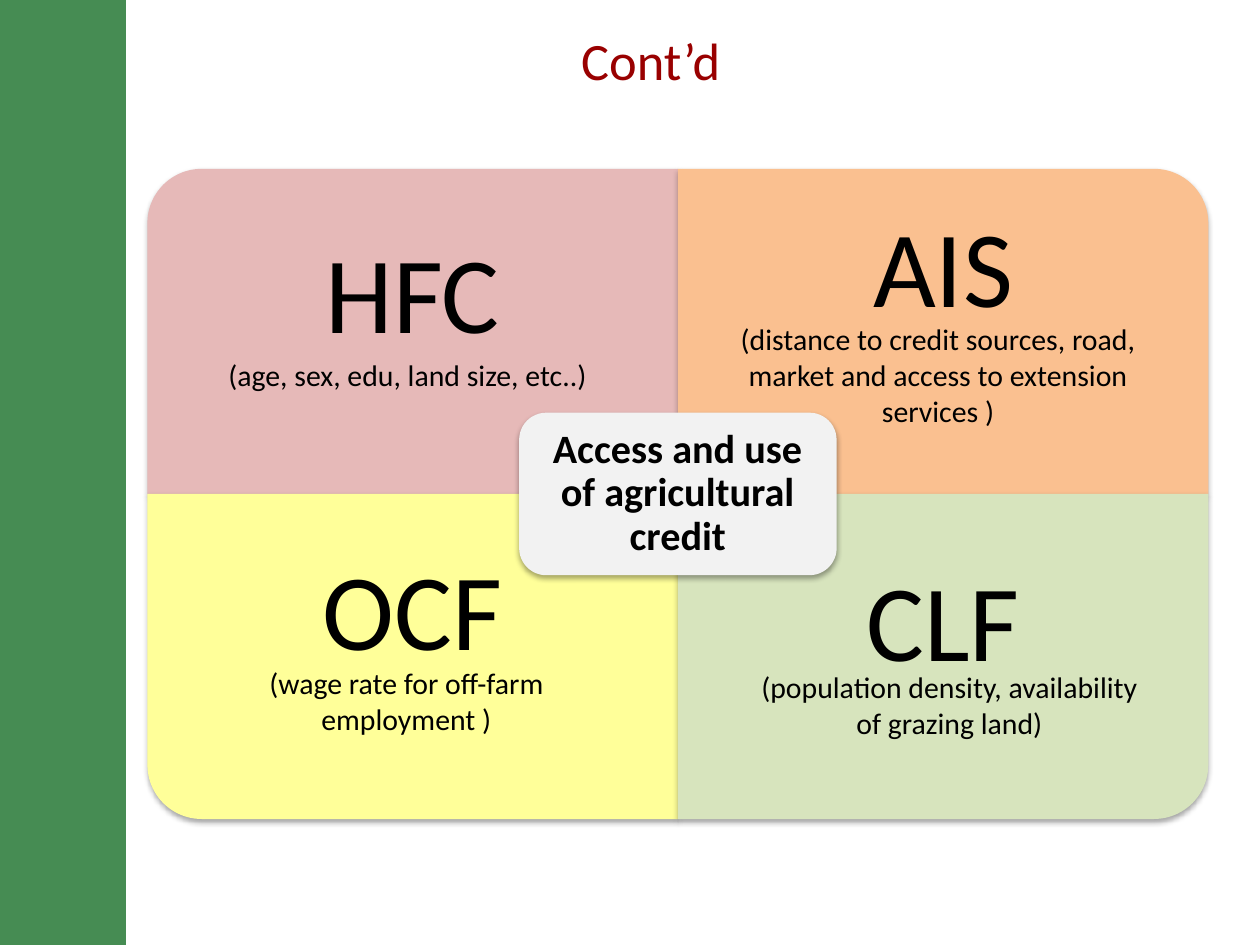
from math import cos, pi, sin

from lxml.etree import SubElement
from pptx import Presentation
from pptx.dml.color import RGBColor
from pptx.enum.shapes import MSO_SHAPE as Shape
from pptx.enum.text import MSO_ANCHOR as Anchor, PP_ALIGN as Align
from pptx.oxml.ns import qn
from pptx.util import Inches, Pt

BLACK = RGBColor(0x00, 0x00, 0x00)
GREEN = RGBColor(0x46, 0x8C, 0x53)
DARK_RED = RGBColor(0x99, 0x00, 0x00)
PINK = RGBColor(0xE6, 0xB9, 0xB8)
ORANGE = RGBColor(0xFA, 0xC0, 0x90)
YELLOW = RGBColor(0xFF, 0xFF, 0x99)
LIGHT_GREEN = RGBColor(0xD7, 0xE4, 0xBD)
LIGHT_GRAY = RGBColor(0xF2, 0xF2, 0xF2)

TITLE = "Cont’d"
CORE = "Access and use of agricultural credit"
# label, fill, (column side, row side), anchor, (top, bottom) inset, line spacing,
# caption, caption box, caption line spacing
FACTORS = [
    ("HFC", PINK, (-1, -1), Anchor.MIDDLE, (0.48, 1.13), 1.0,
     "(age, sex, edu, land size, etc..)", (1.53, 2.62, 3.41, 0.55), Pt(32)),
    ("AIS", ORANGE, (1, -1), Anchor.MIDDLE, (0.2, 1.13), 0.9,
     "(distance to credit sources, road, market and access to extension services )",
     (5.74, 2.5, 3.41, 0.96), 1.0),
    ("OCF", YELLOW, (-1, 1), Anchor.TOP, (0.5, 0.48), 0.9,
     "(wage rate for off-farm employment )", (1.52, 5.23, 3.41, 0.67), 1.0),
    ("CLF", LIGHT_GREEN, (1, 1), Anchor.MIDDLE, (0, 0.48), 0.9,
     "(population density, availability of grazing land)",
     (5.83, 5.26, 3.41, 0.67), 1.0),
]
CENTER_X, CENTER_Y = 5.38, 3.92
QUAD_W, QUAD_H, RADIUS = 4.21, 2.58, 0.43
CORE_W, CORE_H = 2.52, 1.29
ARC_STEPS = 24


def write(shape, text, size, color=BLACK, bold=False, spacing=1.0,
          anchor=Anchor.TOP, insets=(0.1, 0.05, 0.1, 0.05)):
    frame = shape.text_frame
    frame.word_wrap = True
    frame.vertical_anchor = anchor
    (frame.margin_left, frame.margin_top,
     frame.margin_right, frame.margin_bottom) = map(Inches, insets)
    paragraph = frame.paragraphs[0]
    paragraph.text = text
    paragraph.alignment = Align.CENTER
    paragraph.line_spacing = spacing
    font = paragraph.font
    font.name, font.size, font.bold = "Calibri", Pt(size), bold
    font.color.rgb = color


def paint(shape, color, shadow=True):
    shape.fill.solid()
    shape.fill.fore_color.rgb = color
    shape.line.fill.background()
    shape.shadow.inherit = False
    if shadow:
        effects = shape._element.spPr.find(qn("a:effectLst"))
        outer = SubElement(effects, qn("a:outerShdw"), blurRad="39370",
                           dist="22860", dir="5400000", rotWithShape="0")
        black = SubElement(outer, qn("a:srgbClr"), val="000000")
        SubElement(black, qn("a:alpha"), val="35000")


def add_quadrant(shapes, side_x, side_y):
    """Rectangle from the center outwards, with its far corner rounded."""
    angles = [pi / 2 * step / ARC_STEPS for step in range(ARC_STEPS + 1)]
    arc = [(QUAD_W - RADIUS + RADIUS * cos(a), QUAD_H - RADIUS + RADIUS * sin(a))
           for a in angles]
    outline = [(0, 0), (QUAD_W, 0), *arc, (0, QUAD_H)]
    points = [(Inches(CENTER_X + side_x * x), Inches(CENTER_Y + side_y * y))
              for x, y in outline]
    builder = shapes.build_freeform(*points[0])
    builder.add_line_segments(points[1:], close=True)
    return builder.convert_to_shape()


def main():
    deck = Presentation()
    deck.slide_width, deck.slide_height = Inches(10), Inches(7.5)
    shapes = deck.slides.add_slide(deck.slide_layouts[6]).shapes

    sidebar = shapes.add_shape(Shape.RECTANGLE, 0, 0, Inches(1), Inches(7.5))
    paint(sidebar, GREEN, shadow=False)
    title = shapes.add_textbox(*map(Inches, (1, 0.17, 8.33, 0.61)))
    write(title, TITLE, 30, DARK_RED)

    for label, color, sides, anchor, (top, bottom), spacing, *_ in FACTORS:
        quadrant = add_quadrant(shapes, *sides)
        paint(quadrant, color)
        write(quadrant, label, 62, spacing=spacing, anchor=anchor,
              insets=(0.48, top, 0.48, bottom))

    core = shapes.add_shape(
        Shape.ROUNDED_RECTANGLE, Inches(CENTER_X - CORE_W / 2),
        Inches(CENTER_Y - CORE_H / 2), Inches(CORE_W), Inches(CORE_H))
    paint(core, LIGHT_GRAY)
    write(core, CORE, 23, bold=True, spacing=0.9, anchor=Anchor.MIDDLE,
          insets=(0.1, 0.05, 0.1, 0.05))

    for *_, caption, box, spacing in FACTORS:
        write(shapes.add_textbox(*map(Inches, box)), caption, 17, spacing=spacing)

    deck.save("out.pptx")


if __name__ == "__main__":
    main()
